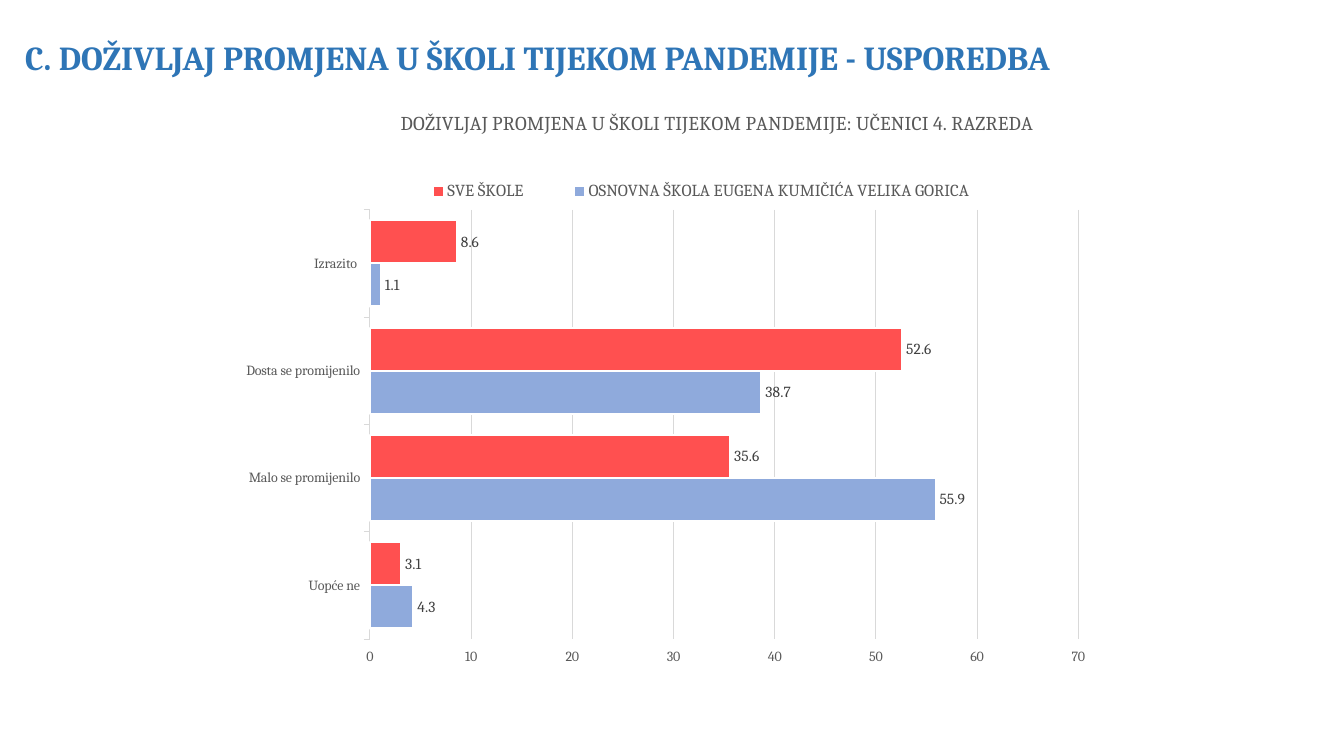
from dataclasses import dataclass

from lxml.etree import SubElement
from pptx import Presentation
from pptx.chart.data import CategoryChartData
from pptx.dml.color import RGBColor
from pptx.enum.chart import XL_CHART_TYPE as ChartType
from pptx.enum.chart import XL_LABEL_POSITION as LabelPosition
from pptx.enum.chart import XL_LEGEND_POSITION as LegendPosition
from pptx.enum.chart import XL_TICK_MARK as TickMark
from pptx.enum.text import MSO_ANCHOR as Anchor
from pptx.enum.text import MSO_AUTO_SIZE as AutoSize
from pptx.enum.text import PP_ALIGN as Align
from pptx.oxml.ns import qn
from pptx.util import Cm, Pt


@dataclass(frozen=True)
class Theme:
    font: str = "Cambria"
    heading: str = "2E75B6"
    muted: str = "595959"
    label: str = "404040"
    grid: str = "D9D9D9"
    white: str = "FFFFFF"
    school: str = "8FAADC"
    all_schools: str = "FF5050"
    heading_size: int = 24
    chart_title_size: int = 14
    legend_size: int = 12
    label_size: int = 11
    axis_size: int = 10


THEME = Theme()

HEADING = "C. DOŽIVLJAJ PROMJENA U ŠKOLI TIJEKOM PANDEMIJE - USPOREDBA"
CHART_TITLE = "DOŽIVLJAJ PROMJENA U ŠKOLI TIJEKOM PANDEMIJE: UČENICI 4. RAZREDA"
ANSWERS = ["Uopće ne", "Malo se promijenilo", "Dosta se promijenilo", "Izrazito "]
SERIES = [
    ("OSNOVNA ŠKOLA EUGENA KUMIČIĆA VELIKA GORICA", [4.3, 55.9, 38.7, 1.1], THEME.school),
    ("SVE ŠKOLE", [3.1, 35.6, 52.6, 8.6], THEME.all_schools),
]


def style_font(font, size, color, bold=False):
    font.name = THEME.font
    font.size = Pt(size)
    font.bold = bold
    font.color.rgb = RGBColor.from_string(color)


def style_line(line, color, width):
    line.color.rgb = RGBColor.from_string(color)
    line.width = Pt(width)


def place_part(part, index, **settings):
    """Give a chart part a manual layout, as fractions of the chart."""
    for old in part.findall(qn("c:layout")):
        part.remove(old)
    layout = SubElement(part, qn("c:layout"))
    part.insert(index, layout)
    manual = SubElement(layout, qn("c:manualLayout"))
    for name, value in settings.items():
        SubElement(manual, qn(f"c:{name}")).set("val", str(value))


def add_heading(page):
    box = page.shapes.title
    box.left, box.top, box.width, box.height = Cm(0.38), Cm(0.79), Cm(31.7), Cm(1.27)
    frame = box.text_frame
    frame.text = HEADING
    frame.word_wrap = True
    frame.auto_size = AutoSize.SHAPE_TO_FIT_TEXT
    frame.vertical_anchor = Anchor.TOP
    para = frame.paragraphs[0]
    para.alignment = Align.LEFT
    style_font(para.runs[0].font, THEME.heading_size, THEME.heading, bold=True)


def style_axes(chart):
    for axis in (chart.category_axis, chart.value_axis):
        axis.major_tick_mark = TickMark.OUTSIDE
        axis.minor_tick_mark = TickMark.NONE
        style_font(axis.tick_labels.font, THEME.axis_size, THEME.muted)
    style_line(chart.category_axis.format.line, THEME.grid, 0.75)
    values = chart.value_axis
    values.minimum_scale, values.maximum_scale, values.major_unit = 0, 70, 10
    values.format.line.fill.background()
    values.has_major_gridlines = True
    style_line(values.major_gridlines.format.line, THEME.grid, 0.75)


def style_bars(plot):
    plot.gap_width = 49
    plot.overlap = 0
    plot.vary_by_categories = False
    for series, (_, _, color) in zip(plot.series, SERIES):
        series.format.fill.solid()
        series.format.fill.fore_color.rgb = RGBColor.from_string(color)
        style_line(series.format.line, THEME.white, 1.5)
        labels = series.data_labels
        labels.show_value = True
        labels.position = LabelPosition.OUTSIDE_END
        style_font(labels.font, THEME.label_size, THEME.label)


def add_comparison_chart(page):
    data = CategoryChartData()
    data.categories = ANSWERS
    for name, values, _ in SERIES:
        data.add_series(name, values)
    chart = page.shapes.add_chart(
        ChartType.BAR_CLUSTERED, Cm(5.66), Cm(2.06), Cm(22.89), Cm(15.82), data
    ).chart
    style_font(chart.font, THEME.axis_size, "000000")

    # Title and legend
    chart.has_title = True
    frame = chart.chart_title.text_frame
    frame.text = CHART_TITLE
    style_font(frame.paragraphs[0].runs[0].font, THEME.chart_title_size, THEME.muted)
    chart.has_legend = True
    chart.legend.position = LegendPosition.TOP
    chart.legend.include_in_layout = False
    style_font(chart.legend.font, THEME.legend_size, THEME.muted)

    style_axes(chart)
    style_bars(chart.plots[0])

    # Positions inside the chart
    root = chart.element.find(qn("c:chart"))
    place_part(root.find(qn("c:title")), 1, xMode="edge", yMode="edge", x=0.19, y=0.04)
    place_part(root.find(qn("c:legend")), 1, xMode="edge", yMode="edge",
               x=0.18, y=0.15, w=0.69, h=0.05)
    place_part(root.find(qn("c:plotArea")), 0, layoutTarget="inner", xMode="edge",
               yMode="edge", x=0.16, y=0.204, w=0.78, h=0.684)


def main():
    deck = Presentation()
    deck.slide_width, deck.slide_height = Cm(33.87), Cm(19.05)
    page = deck.slides.add_slide(deck.slide_layouts.get_by_name("Title Only"))
    add_heading(page)
    add_comparison_chart(page)
    deck.save("out.pptx")


if __name__ == "__main__":
    main()
